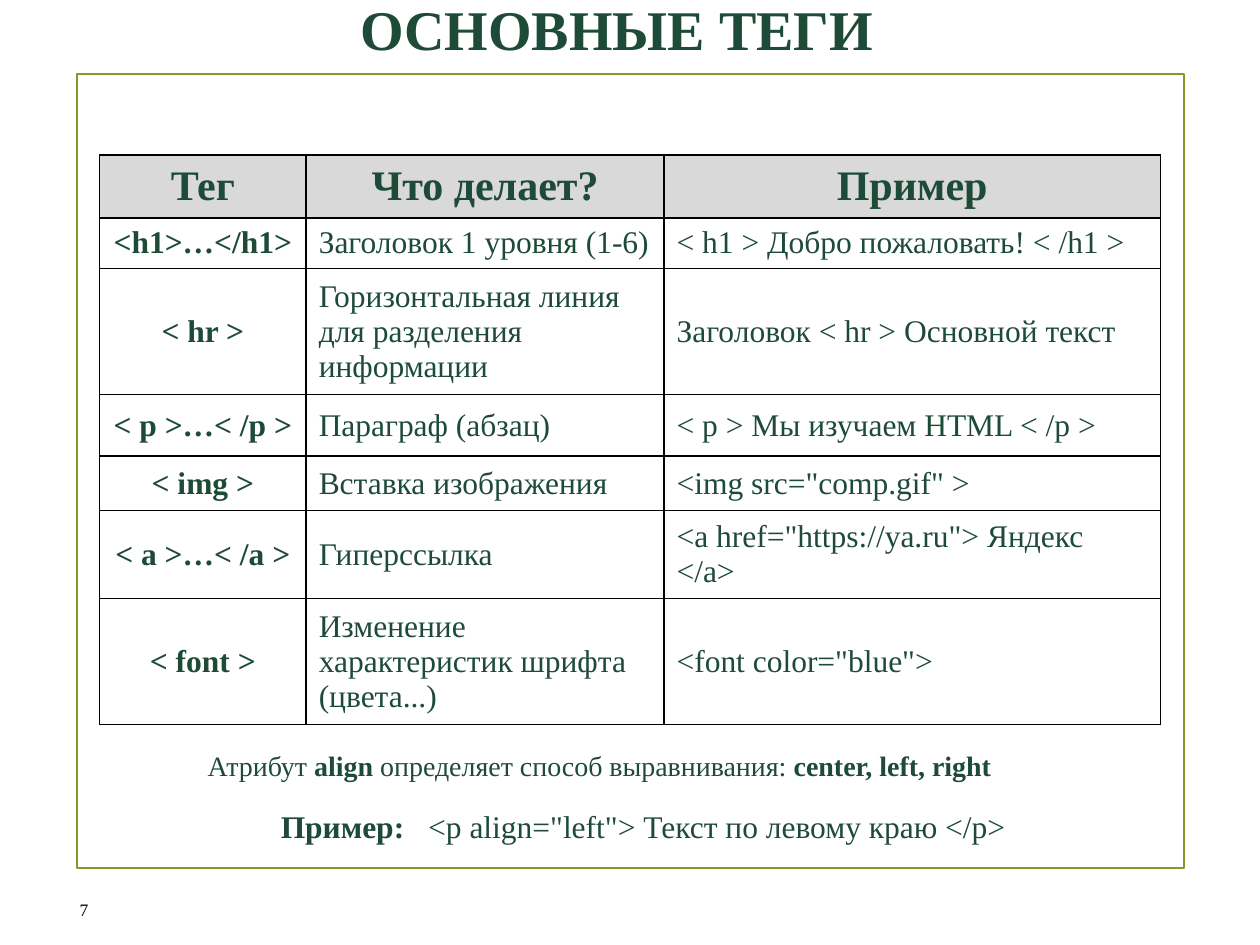
"""Build a slide with a table of the basic HTML tags."""
from lxml import etree
from pptx import Presentation
from pptx.dml.color import RGBColor
from pptx.enum.shapes import MSO_SHAPE
from pptx.enum.text import MSO_ANCHOR, PP_ALIGN
from pptx.oxml.ns import qn
from pptx.util import Inches, Pt

RECT = MSO_SHAPE.RECTANGLE
TOP, MIDDLE = MSO_ANCHOR.TOP, MSO_ANCHOR.MIDDLE
LEFT, CENTER, RIGHT = PP_ALIGN.LEFT, PP_ALIGN.CENTER, PP_ALIGN.RIGHT
GREEN = RGBColor(0x1E, 0x4B, 0x38)
OLIVE = RGBColor(0x83, 0x99, 0x2A)
GRAY = RGBColor(0xD9, 0xD9, 0xD9)
WHITE = RGBColor(0xFF, 0xFF, 0xFF)
BLACK = RGBColor(0, 0, 0)
FONT = "Times New Roman"

TITLE = [("ОСНОВНЫЕ ТЕГИ", True)]
NOTE = [
    ("Атрибут ", False),
    ("align ", True),
    ("определяет способ выравнивания: ", False),
    ("center, left, right", True),
]
SAMPLE = [("Пример:", True), ("\t<p align=\"left\"> Текст по левому краю </p>", False)]
TAGS = [
    ("Тег", "Что делает?", "Пример"),
    ("<h1>…</h1>", "Заголовок 1 уровня (1-6)", "< h1 > Добро пожаловать! < /h1 >"),
    ("< hr >", "Горизонтальная линия для разделения информации",
     "Заголовок < hr > Основной текст"),
    ("< p >…< /p >", "Параграф (абзац)", "< p > Мы изучаем HTML < /p >"),
    ("< img >", "Вставка изображения", "<img src=\"comp.gif\" >"),
    ("< a >…< /a >", "Гиперссылка", "<a href=\"https://ya.ru\"> Яндекс </a>"),
    ("< font >", "Изменение характеристик шрифта (цвета...)", "<font color=\"blue\">"),
]
WIDTHS = [1.64, 2.84, 3.94]
HEIGHTS = [0.5, 0.4, 1, 0.49, 0.43, 0.7, 1]


def write(para, runs, size, color=GREEN, align=LEFT):
    para.alignment = align
    font = para.font
    font.name, font.size, font.color.rgb = FONT, Pt(size), color
    for text, bold in runs:
        run = para.add_run()
        run.text = text
        run.font.bold = bold
        run.font.name, run.font.size = FONT, Pt(size)
        run.font.color.rgb = color


def add_text(slide, box, runs, size, color=GREEN, align=LEFT, anchor=TOP, tab=None):
    frame = slide.shapes.add_textbox(*map(Inches, box)).text_frame
    frame.word_wrap = True
    frame.vertical_anchor = anchor
    para = frame.paragraphs[0]
    if tab:
        stops = etree.SubElement(para._p.get_or_add_pPr(), qn("a:tabLst"))
        etree.SubElement(stops, qn("a:tab"), pos=str(Inches(tab)), algn="l")
    write(para, runs, size, color, align)


def add_lines(cell):
    props = cell._tc.get_or_add_tcPr()
    for side in ("lnL", "lnR", "lnT", "lnB"):
        line = etree.SubElement(props, qn(f"a:{side}"), w=str(Pt(1)))
        fill = etree.SubElement(line, qn("a:solidFill"))
        etree.SubElement(fill, qn("a:srgbClr"), val=str(BLACK))


def add_tags(slide):
    box = (0.79, 1.23, sum(WIDTHS), sum(HEIGHTS))
    table = slide.shapes.add_table(len(TAGS), len(WIDTHS), *map(Inches, box)).table
    for col, width in zip(table.columns, WIDTHS):
        col.width = Inches(width)
    for row, height in zip(table.rows, HEIGHTS):
        row.height = Inches(height)
    for r, texts in enumerate(TAGS):
        for c, text in enumerate(texts):
            cell = table.cell(r, c)
            head = r == 0
            strong = head or c == 0
            add_lines(cell)
            cell.fill.solid()
            cell.fill.fore_color.rgb = GRAY if head else WHITE
            cell.vertical_anchor = MIDDLE
            write(cell.text_frame.paragraphs[0], [(text, strong)],
                  24 if head else 18, align=CENTER if strong else LEFT)


def main():
    deck = Presentation()
    deck.slide_width, deck.slide_height = Inches(10), Inches(7.5)
    slide = deck.slides.add_slide(deck.slide_layouts[6])
    frame = slide.shapes.add_shape(RECT, *map(Inches, (0.61, 0.59, 8.79, 6.3)))
    frame.shadow.inherit = False
    frame.fill.background()
    frame.line.color.rgb = OLIVE
    frame.line.width = Pt(1.25)
    add_text(slide, (0.33, 7.02, 0.47, 0.4), [("7", None)], 10, BLACK, RIGHT, MIDDLE)
    add_text(slide, (2.76, -0.09, 5, 0.64), TITLE, 32)
    add_tags(slide)
    add_text(slide, (1.55, 5.89, 7.4, 0.37), NOTE, 16)
    add_text(slide, (2.13, 6.36, 6.08, 0.4), SAMPLE, 18, tab=1.17)
    deck.save("out.pptx")


if __name__ == "__main__":
    main()
